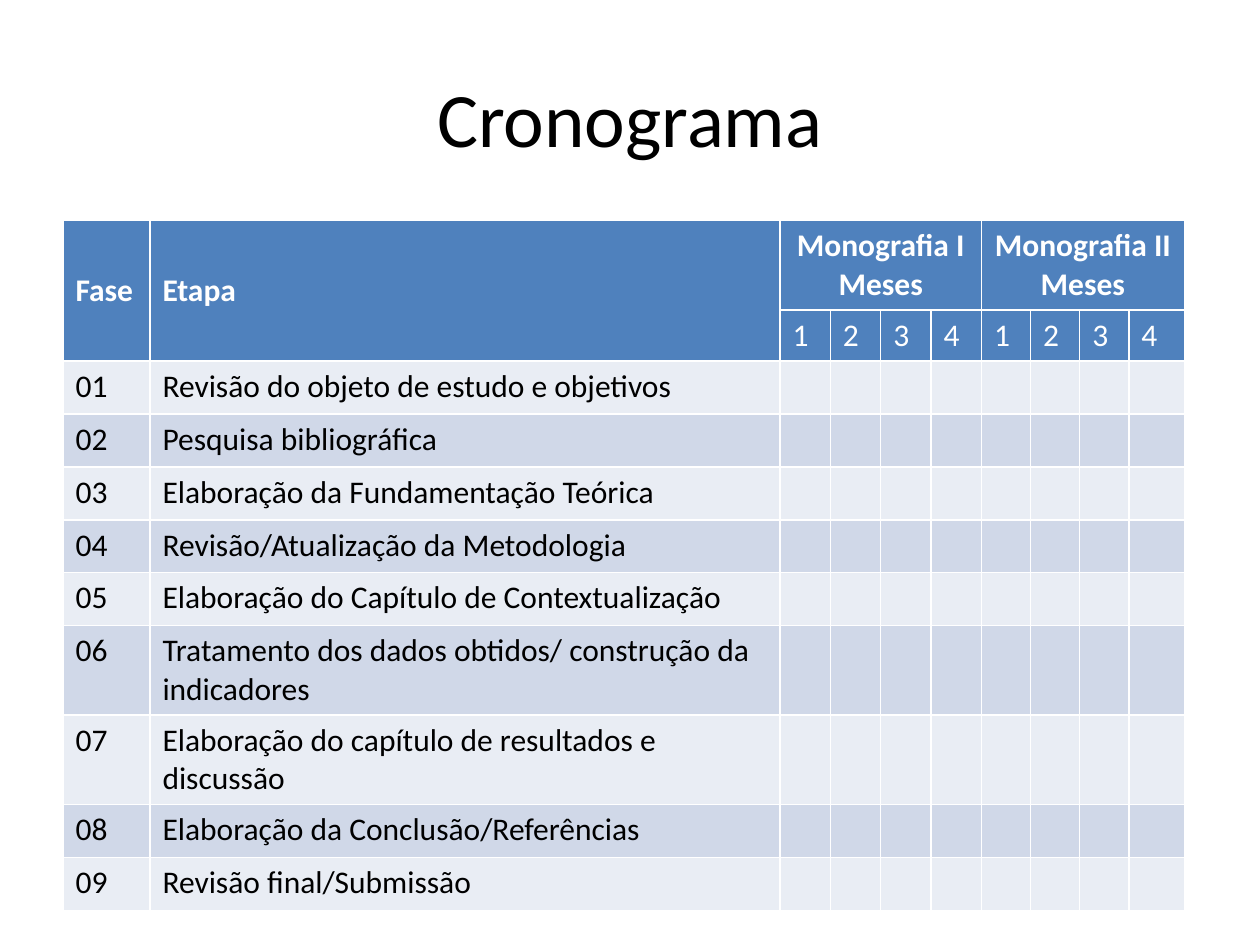
"""Build the project schedule slide."""
from lxml import etree
from pptx import Presentation
from pptx import util as u
from pptx.dml.color import RGBColor
from pptx.enum import text
from pptx.oxml.ns import qn

FONT = "Calibri"
HEADER, LIGHT, DARK = "4F81BD", "E9EDF4", "D0D8E8"
WHITE, BLACK = "FFFFFF", "000000"
MONTHS = ["1", "2", "3", "4"]
COLUMN_WIDTHS = [0.69, 5] + [0.4] * 4 + [0.39] * 3 + [0.44]
HEADER_HEIGHTS = [0.66, 0.37]
STAGES = [
    ("Revisão do objeto de estudo e objetivos", 0.42),
    ("Pesquisa bibliográfica", 0.42),
    ("Elaboração da Fundamentação Teórica", 0.42),
    ("Revisão/Atualização da Metodologia", 0.42),
    ("Elaboração do Capítulo de Contextualização", 0.42),
    ("Tratamento dos dados obtidos/ construção da indicadores", 0.66),
    ("Elaboração do capítulo de resultados e discussão", 0.66),
    ("Elaboração da Conclusão/Referências", 0.42),
    ("Revisão final/Submissão", 0.42),
]


def color(value):
    """Turn a hex string into a colour."""
    return RGBColor.from_string(value)


def add_run(paragraph, words, size, fill, bold=False):
    """Add one formatted run to a paragraph."""
    run = paragraph.add_run()
    run.text = words
    run.font.name = FONT
    run.font.size = u.Pt(size)
    run.font.bold = bold
    run.font.color.rgb = color(fill)


def add_title(slide, words):
    """Place and fill the title placeholder."""
    title = slide.shapes.title
    title.left, title.top = u.Inches(0.5), u.Inches(0.3)
    title.width, title.height = u.Inches(9), u.Inches(1.25)
    title.text_frame.vertical_anchor = text.MSO_ANCHOR.MIDDLE
    paragraph = title.text_frame.paragraphs[0]
    paragraph.alignment = text.PP_ALIGN.CENTER
    add_run(paragraph, words, 44, BLACK)


def style_cell(cell, fill):
    """Fill a cell and give it thin white borders."""
    cell.fill.solid()
    cell.fill.fore_color.rgb = color(fill)
    properties = cell._tc.get_or_add_tcPr()
    for index, side in enumerate(("lnL", "lnR", "lnT", "lnB")):
        line = etree.Element(qn(f"a:{side}"), w=str(u.Pt(1)))
        solid = etree.SubElement(line, qn("a:solidFill"))
        etree.SubElement(solid, qn("a:srgbClr"), val=WHITE)
        properties.insert(index, line)


def write_header(cell, words, bold=True):
    """Write white header text, vertically centred."""
    cell.vertical_anchor = text.MSO_ANCHOR.MIDDLE
    add_run(cell.text_frame.paragraphs[0], words, 18, WHITE, bold)


def fill_header(table):
    """Write the two merged header rows."""
    for column, words in enumerate(("Fase", "Etapa")):
        table.cell(0, column).merge(table.cell(1, column))
        write_header(table.cell(0, column), words)
    for first, words in ((2, "Monografia I"), (6, "Monografia II")):
        cell = table.cell(0, first)
        cell.merge(table.cell(0, first + len(MONTHS) - 1))
        write_header(cell, words)
        paragraph = cell.text_frame.add_paragraph()
        add_run(paragraph, "Meses", 18, WHITE, True)
        for line in cell.text_frame.paragraphs:
            line.alignment = text.PP_ALIGN.CENTER
        for offset, month in enumerate(MONTHS):
            write_header(table.cell(1, first + offset), month, False)


def add_schedule(slide):
    """Add the schedule table with its header and stages."""
    heights = HEADER_HEIGHTS + [height for _, height in STAGES]
    frame = slide.shapes.add_table(
        len(heights), len(COLUMN_WIDTHS), u.Inches(0.5), u.Inches(1.75),
        u.Inches(sum(COLUMN_WIDTHS)), u.Inches(sum(heights)))
    table = frame.table
    for column, width in zip(table.columns, COLUMN_WIDTHS):
        column.width = u.Inches(width)
    for index, (row, height) in enumerate(zip(table.rows, heights)):
        row.height = u.Inches(height)
        fill = HEADER if index < len(HEADER_HEIGHTS) else (LIGHT, DARK)[index % 2]
        for cell in row.cells:
            style_cell(cell, fill)
    fill_header(table)
    for number, (stage, _) in enumerate(STAGES, 1):
        for column, words in enumerate((f"{number:02d}", stage)):
            cell = table.cell(number + 1, column)
            add_run(cell.text_frame.paragraphs[0], words, 18, BLACK)


def main():
    """Create and save the presentation."""
    presentation = Presentation()
    presentation.slide_width = u.Inches(10)
    presentation.slide_height = u.Inches(7.5)
    slide = presentation.slides.add_slide(presentation.slide_layouts[5])
    add_title(slide, "Cronograma")
    add_schedule(slide)
    presentation.save("out.pptx")


if __name__ == "__main__":
    main()
